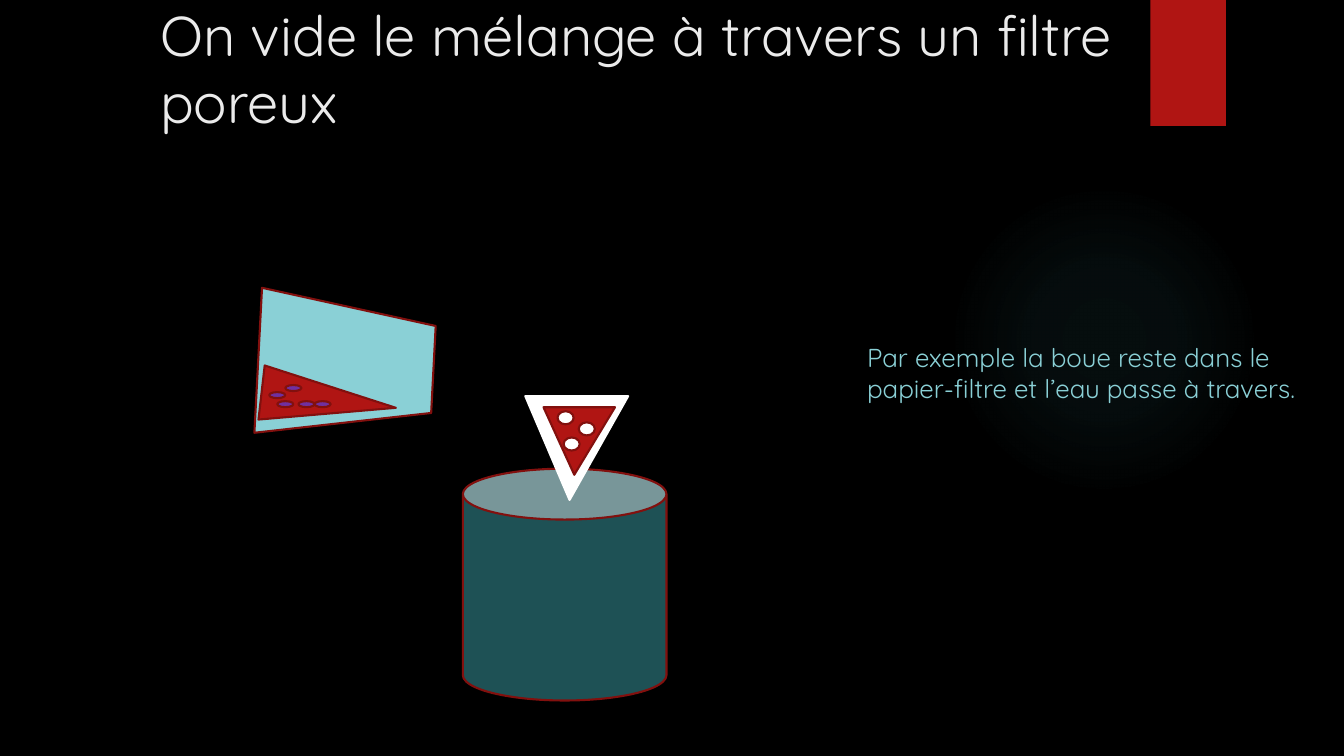
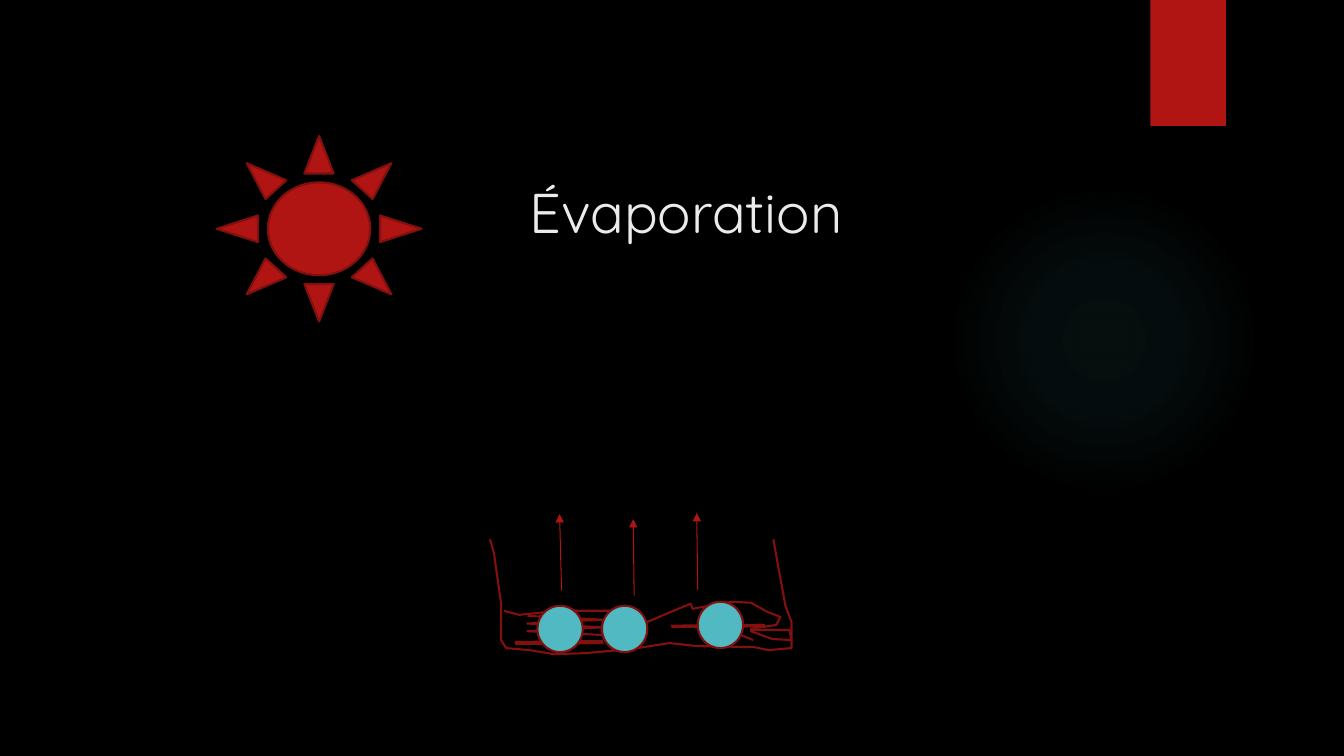
from dataclasses import dataclass

from lxml.etree import SubElement
from pptx import Presentation
from pptx.dml.color import RGBColor
from pptx.enum.shapes import MSO_CONNECTOR, MSO_SHAPE
from pptx.enum.text import MSO_ANCHOR, MSO_AUTO_SIZE, PP_ALIGN
from pptx.oxml.ns import qn
from pptx.util import Inches, Pt


@dataclass(frozen=True)
class Theme:
    font: str = "Quicksand"
    title_size: float = 40
    body_size: float = 18.5
    outline_width: float = 1.5
    arrow_width: float = 0.75
    background: str = "000000"
    title: str = "EBEBEB"
    red: str = "B01513"
    outline: str = "82100E"
    water: str = "50B9C1"
    pale_water: str = "8AD0D6"
    deep_water: str = "1E5155"
    mud: str = "7030A0"
    white: str = "FFFFFF"


class Slides:
    def __init__(self, theme):
        self.theme = theme
        self.deck = Presentation()
        self.deck.slide_width = Inches(13.33)
        self.deck.slide_height = Inches(7.5)
        fill = self.deck.slide_master.background.fill
        fill.solid()
        fill.fore_color.rgb = RGBColor.from_string(theme.background)
        self.page = None

    def new_page(self, layout_name):
        """Start a page with the glow and the red band behind its text."""
        layout = self.deck.slide_layouts.get_by_name(layout_name)
        self.page = self.deck.slides.add_slide(layout)
        glow = self.shape(MSO_SHAPE.OVAL, (9.41, 1.83, 3.08, 3.08), None, None)
        self.radial_fade(glow, ((0, 7), (36, 6), (69, 0)))
        band = self.shape(MSO_SHAPE.RECTANGLE, (11.41, 0, 0.75, 1.25), self.theme.red, None)
        for decoration in (band, glow):
            self.page.shapes.element.insert(2, decoration.element)

    def radial_fade(self, shape, stops):
        """Fill with the water colour; stops are (position, opacity) in percent."""
        properties = shape.element.spPr
        gradient = SubElement(properties, qn("a:gradFill"), rotWithShape="1")
        stop_list = SubElement(gradient, qn("a:gsLst"))
        for position, opacity in stops:
            stop = SubElement(stop_list, qn("a:gs"), pos=str(position * 1000))
            color = SubElement(stop, qn("a:srgbClr"), val=self.theme.water)
            SubElement(color, qn("a:alpha"), val=str(opacity * 1000))
        center = SubElement(gradient, qn("a:path"), path="circle")
        SubElement(center, qn("a:fillToRect"), l="50000", t="50000", r="50000", b="50000")
        properties.replace(properties.find(qn("a:noFill")), gradient)

    def title(self, text, place):
        self.placeholder(self.page.shapes.title, text, place, MSO_ANCHOR.BOTTOM,
                         self.theme.title_size, self.theme.title)

    def body(self, text, place):
        para = self.placeholder(self.page.placeholders[1], text, place, MSO_ANCHOR.TOP,
                                self.theme.body_size, self.theme.pale_water)
        properties = para._p.get_or_add_pPr()
        properties.set("marL", "0")
        properties.set("indent", "0")
        SubElement(properties, qn("a:buNone"))

    def placeholder(self, box, text, place, anchor, size, color):
        box.left, box.top, box.width, box.height = map(Inches, place)
        frame = box.text_frame
        frame.word_wrap = True
        frame.auto_size = MSO_AUTO_SIZE.NONE
        frame.vertical_anchor = anchor
        para = frame.paragraphs[0]
        para.alignment = PP_ALIGN.LEFT
        para.space_before = Pt(0)
        span = para.add_run()
        span.text = text
        span.font.name = self.theme.font
        span.font.size = Pt(size)
        span.font.color.rgb = RGBColor.from_string(color)
        return para

    def paint(self, shape, fill, line):
        shape.shadow.inherit = False
        if fill:
            shape.fill.solid()
            shape.fill.fore_color.rgb = RGBColor.from_string(fill)
        else:
            shape.fill.background()
        if line:
            shape.line.color.rgb = RGBColor.from_string(line)
            shape.line.width = Pt(self.theme.outline_width)
        else:
            shape.line.fill.background()

    def shape(self, kind, place, fill, line=Theme.outline, rotation=0, tip=None):
        shape = self.page.shapes.add_shape(kind, *map(Inches, place))
        shape.rotation = rotation
        if tip is not None:
            shape.adjustments[0] = tip
        self.paint(shape, fill, line)
        return shape

    def ovals(self, corners, size, fill):
        for corner in corners:
            self.shape(MSO_SHAPE.OVAL, (*corner, *size), fill)

    def stroke(self, points):
        """Draw an open, unfilled line through points given in inches."""
        start, *others = [(Inches(x), Inches(y)) for x, y in points]
        builder = self.page.shapes.build_freeform(*start)
        builder.add_line_segments(others, close=False)
        self.paint(builder.convert_to_shape(), None, self.theme.outline)

    def ripple(self, left, right, top, bottom, passes):
        """Scribble from side to side, a little lower at each pass."""
        step = (bottom - top) / passes
        self.stroke([((left, right)[turn % 2], top + turn * step) for turn in range(passes + 1)])

    def arrow(self, start, end):
        arrow = self.page.shapes.add_connector(
            MSO_CONNECTOR.STRAIGHT, *map(Inches, (*start, *end)))
        arrow.line.color.rgb = RGBColor.from_string(self.theme.red)
        arrow.line.width = Pt(self.theme.arrow_width)
        properties = arrow.element.spPr
        SubElement(properties.find(qn("a:ln")), qn("a:tailEnd"), type="triangle")
        SubElement(properties, qn("a:effectLst"))


def tilted_beaker(slides):
    theme = slides.theme
    slides.shape(MSO_SHAPE.FLOWCHART_MANUAL_OPERATION, (2.71, 2.75, 1.44, 1.74),
                 theme.pale_water, rotation=273)
    slides.shape(MSO_SHAPE.ISOSCELES_TRIANGLE, (2.99, 3.3, 0.54, 1.34), theme.red, rotation=96.5)
    mud_grains = [(2.75, 3.98), (3.12, 3.98), (2.83, 3.82), (2.67, 3.89), (2.96, 3.98)]
    slides.ovals(mud_grains, (0.16, 0.06), theme.mud)


def filter_over_can(slides):
    theme = slides.theme
    slides.shape(MSO_SHAPE.CAN, (4.59, 4.65, 2.02, 2.3), theme.deep_water)
    paper = ((5.21, 3.93, 1.02, 1.03), theme.white, theme.white)
    residue = ((5.39, 4.04, 0.71, 0.67), theme.red, theme.outline)
    for cone in (paper, residue):
        slides.shape(MSO_SHAPE.ISOSCELES_TRIANGLE, *cone, rotation=180, tip=0.57)
    stones = [(5.59, 4.34), (5.74, 4.19), (5.53, 4.08)]
    slides.ovals(stones, (0.16, 0.13), theme.white)


def water_tank(slides):
    left, right, rim, floor = 4.97, 7.85, 5.35, 6.43
    left_wall = [(left - 0.11, rim), (left - 0.07, 5.49), (left, 5.99), (left, floor - 0.08)]
    base = [(5.02, floor), (5.25, 6.45), (5.5, 6.49), (5.8, 6.48), (6.26, 6.44),
            (6.64, 6.38), (6.91, 6.41), (7.48, 6.42), (7.62, 6.45)]
    right_wall = [(right, floor), (right, 6.17), (right - 0.06, 6.01), (right - 0.18, rim)]
    slides.stroke(left_wall + base + right_wall)

    surface = [(5, 6.06), (5.15, 6.1), (5.55, 6.06), (6.08, 6.06), (6.42, 6.17),
               (6.68, 6.06), (6.85, 5.99), (6.87, 6.04), (7.25, 5.97), (7.45, 5.98),
               (7.61, 6.07), (7.74, 6.12), (7.7, 6.2), (7.44, 6.24)]
    slides.stroke(surface)
    slides.stroke([(7.44, 6.26), (7.66, 6.34), (right, 6.35), (7.83, 6.25), (7.44, 6.25)])
    slides.ripple(5.23, 5.98, 6.11, 6.3, passes=5)
    slides.ripple(5.11, 5.98, 6.39, 6.36, passes=3)
    slides.ripple(6.66, 7.59, 6.22, 6.2, passes=3)
    slides.ripple(7.3, 7.47, 6.28, 6.35, passes=1)


def rising_vapour(slides):
    rise = 0.76
    for left, bottom, drift in ((5.57, 5.86, 0.02), (6.29, 5.91, 0.01), (6.92, 5.85, 0.01)):
        slides.arrow((left, bottom), (left - drift, bottom - rise))
    drops = [(5.33, 6.01), (5.97, 6.01), (6.92, 5.97)]
    slides.ovals(drops, (0.45, 0.46), slides.theme.water)


def filtration(slides):
    slides.new_page("Title and Content")
    slides.title("On vide le mélange à travers un filtre poreux", (1.49, 0.17, 9.65, 1.22))
    slides.body("Par exemple la boue reste dans le papier-filtre et l’eau passe à travers.",
                (8.5, 3.34, 4.5, 0.94))
    tilted_beaker(slides)
    filter_over_can(slides)


def evaporation(slides):
    slides.new_page("Title Only")
    slides.title("Évaporation", (5.15, 0.67, 6.22, 1.81))
    slides.shape(MSO_SHAPE.SUN, (2.15, 1.35, 2.03, 1.84), slides.theme.red)
    water_tank(slides)
    rising_vapour(slides)


def main():
    slides = Slides(Theme())
    filtration(slides)
    evaporation(slides)
    slides.deck.save("out.pptx")


if __name__ == "__main__":
    main()
